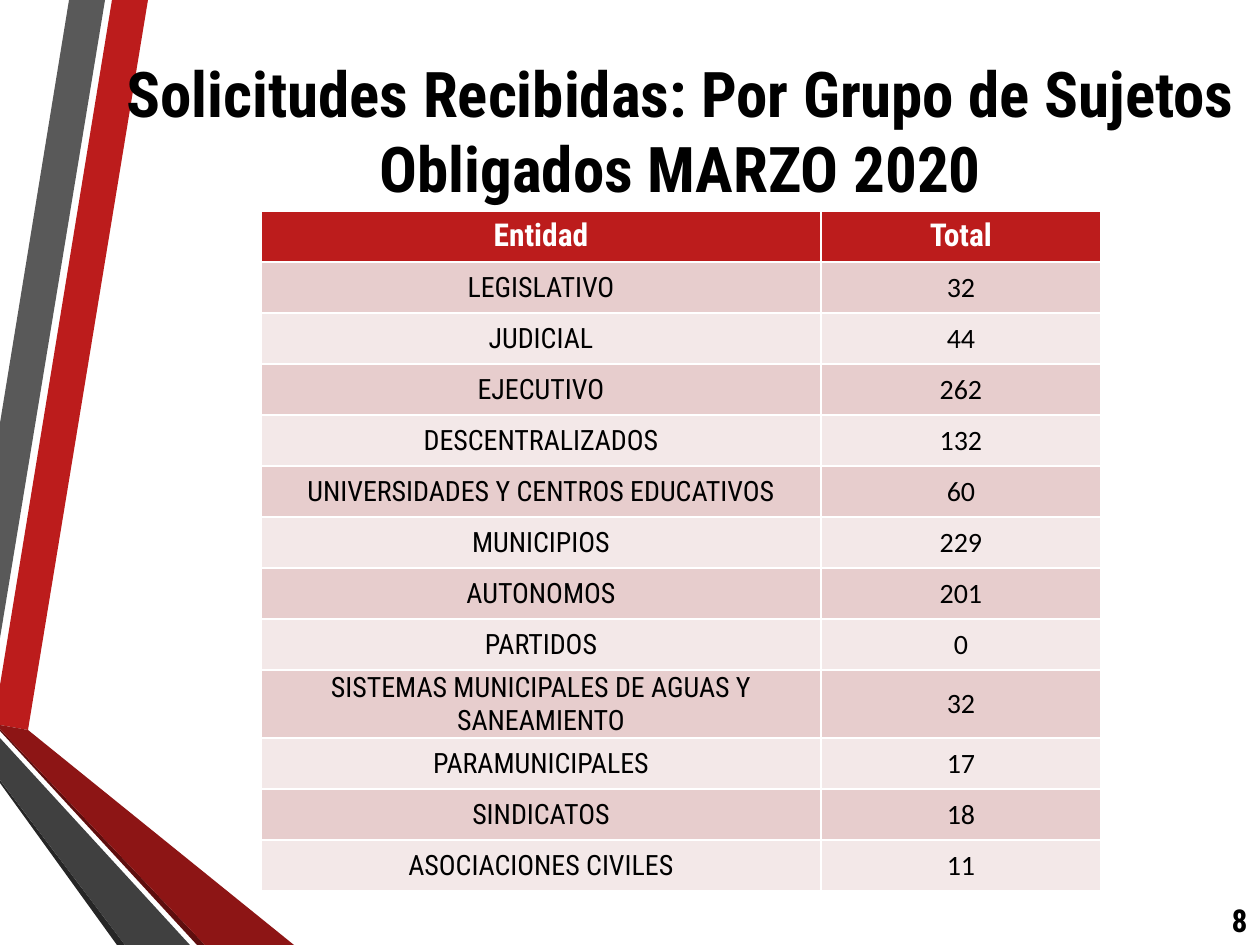
from typing import NamedTuple

from pptx import Presentation
from pptx.dml.color import RGBColor
from pptx.enum.text import MSO_ANCHOR, MSO_AUTO_SIZE, PP_ALIGN
from pptx.util import Emu, Pt

SCALE = 914400 / 126
FONT = "Roboto Condensed"
BLACK, WHITE, RED = "000000", "FFFFFF", "BC1C1C"
BANDS = ("E7CDCD", "F3E8E8")


class Stripe(NamedTuple):
    """A filled polygon of the side ribbon."""
    color: str
    points: list[tuple[int, int]]


class Entry(NamedTuple):
    """One group of entities and its number of requests."""
    name: str
    total: int


STRIPES = [
    Stripe(RED, [(0, 685), (0, 725), (28, 730), (148, 0), (112, 0)]),
    Stripe("595959", [(105, 0), (69, 0), (0, 423), (0, 638)]),
    Stripe("262626", [(0, 780), (0, 783), (117, 945), (125, 945)]),
    Stripe("5E0E0E", [(0, 729), (0, 731), (197, 945), (205, 945)]),
    Stripe("8D1515", [(0, 729), (205, 945), (294, 945), (28, 730), (0, 725)]),
    Stripe("404040", [(0, 780), (125, 945), (190, 945), (0, 738)]),
]

ENTRIES = [
    Entry("LEGISLATIVO", 32),
    Entry("JUDICIAL", 44),
    Entry("EJECUTIVO", 262),
    Entry("DESCENTRALIZADOS", 132),
    Entry("UNIVERSIDADES Y CENTROS EDUCATIVOS", 60),
    Entry("MUNICIPIOS", 229),
    Entry("AUTONOMOS", 201),
    Entry("PARTIDOS", 0),
    Entry("SISTEMAS MUNICIPALES DE AGUAS Y SANEAMIENTO", 32),
    Entry("PARAMUNICIPALES", 17),
    Entry("SINDICATOS", 18),
    Entry("ASOCIACIONES CIVILES", 11),
]


def px(size: int) -> Emu:
    """Turn pixels into EMU."""
    return Emu(round(size * SCALE))


def rgb(color: str) -> RGBColor:
    """Turn a hex string into a colour."""
    return RGBColor.from_string(color)


def write(frame, text: str, size: int, color: str = BLACK, bold: bool = True,
          font: str = FONT, align: PP_ALIGN = PP_ALIGN.CENTER) -> None:
    """Set the text of a frame and format its runs."""
    frame.text = text
    for para in frame.paragraphs:
        para.alignment = align
        for run in para.runs:
            run.font.name = font
            run.font.size = Pt(size)
            run.font.bold = bold
            run.font.color.rgb = rgb(color)


def draw_stripe(slide, stripe: Stripe) -> None:
    """Draw one polygon of the ribbon."""
    first, *rest = stripe.points
    pen = slide.shapes.build_freeform(*first, scale=SCALE)
    pen.add_line_segments(rest, close=True)
    shape = pen.convert_to_shape()
    shape.shadow.inherit = False
    shape.fill.solid()
    shape.fill.fore_color.rgb = rgb(stripe.color)
    shape.line.fill.background()


def paint(cell, color: str) -> None:
    """Fill a table cell."""
    cell.fill.solid()
    cell.fill.fore_color.rgb = rgb(color)


def draw_table(slide, entries: list[Entry]) -> None:
    """Draw the table of requests by group."""
    count = len(entries) + 1
    table = slide.shapes.add_table(
        count, 2, px(261), px(211), px(840), px(51 * count)).table
    for col, width in zip(table.columns, (560, 280)):
        col.width = px(width)
    for row in table.rows:
        row.height = px(51)
    for col, text in enumerate(("Entidad", "Total")):
        cell = table.cell(0, col)
        write(cell.text_frame, text, 18, WHITE)
        paint(cell, RED)
    for row, entry in enumerate(entries, 1):
        name, total = table.cell(row, 0), table.cell(row, 1)
        write(name.text_frame, entry.name, 16, bold=False)
        write(total.text_frame, str(entry.total), 16, bold=False, font="Calibri")
        name.margin_left = name.margin_right = name.margin_top = px(1)
        name.margin_bottom = 0
        for cell in (name, total):
            cell.vertical_anchor = MSO_ANCHOR.MIDDLE
            paint(cell, BANDS[(row - 1) % 2])


def draw_number(slide, text: str) -> None:
    """Write the page number in the bottom corner."""
    frame = slide.shapes.add_textbox(px(1201), px(895), px(59), px(50)).text_frame
    frame.word_wrap = True
    frame.vertical_anchor = MSO_ANCHOR.MIDDLE
    write(frame, text, 18, align=PP_ALIGN.RIGHT)


def draw_title(slide, text: str) -> None:
    """Place the title in front of the ribbon."""
    title = slide.shapes.title
    title.left, title.top = px(82), px(84)
    title.width, title.height = px(1197), px(92)
    frame = title.text_frame
    frame.word_wrap = True
    frame.auto_size = MSO_AUTO_SIZE.NONE
    frame.vertical_anchor = MSO_ANCHOR.MIDDLE
    write(frame, text, 36)
    slide.shapes._spTree.append(title._element)


def main() -> None:
    """Build and save the slide."""
    deck = Presentation()
    deck.slide_width, deck.slide_height = px(1260), px(945)
    slide = deck.slides.add_slide(deck.slide_layouts[5])
    for stripe in STRIPES:
        draw_stripe(slide, stripe)
    draw_number(slide, "8")
    draw_table(slide, ENTRIES)
    draw_title(slide, "Solicitudes Recibidas: Por Grupo de Sujetos\vObligados MARZO 2020")
    deck.save("out.pptx")


if __name__ == "__main__":
    main()
